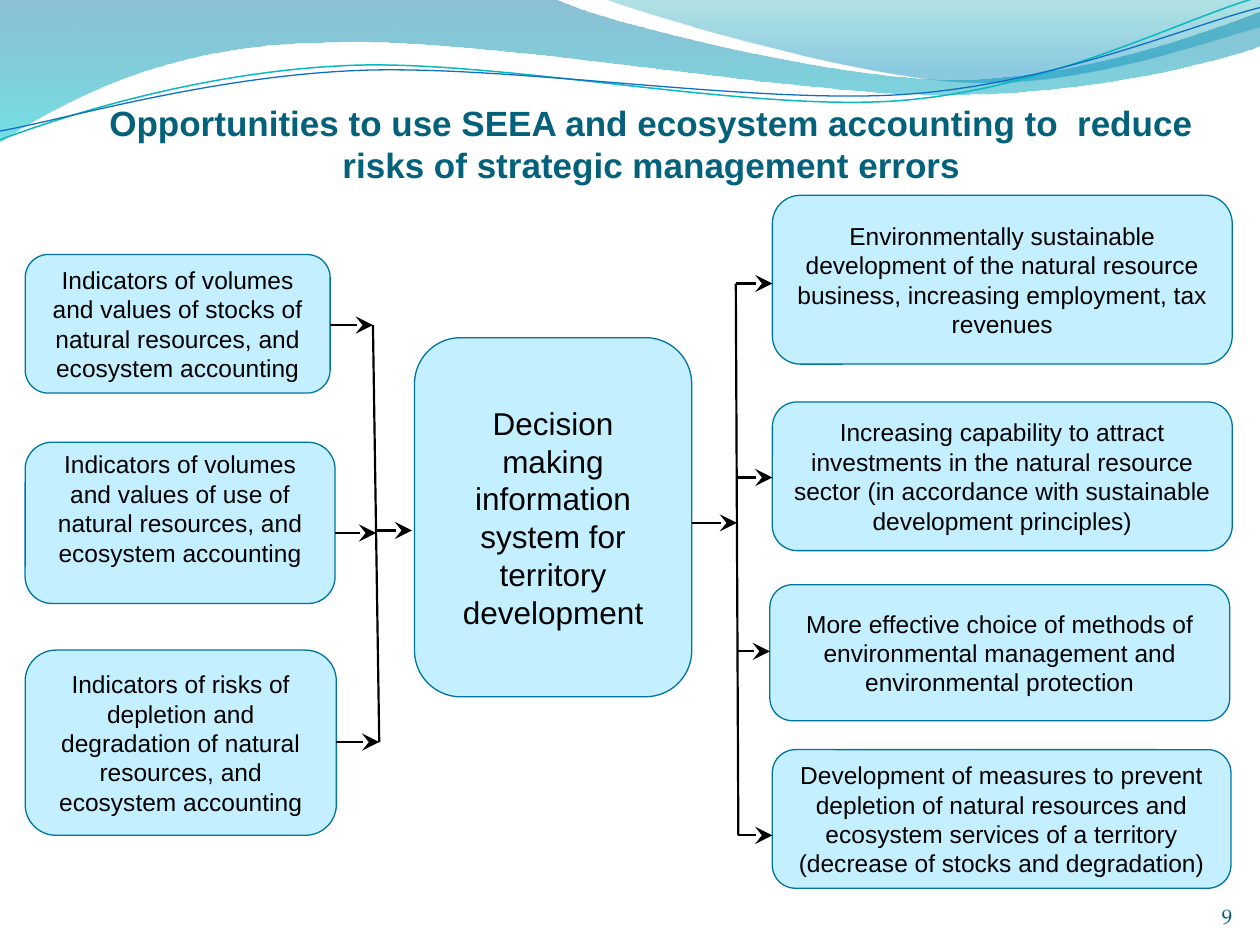
from lxml import etree
from pptx import Presentation
from pptx.dml.color import RGBColor
from pptx.enum.shapes import MSO_CONNECTOR, MSO_SHAPE
from pptx.enum.text import MSO_ANCHOR, PP_ALIGN
from pptx.oxml.ns import qn
from pptx.util import Inches, Pt

STRAIGHT = MSO_CONNECTOR.STRAIGHT
ROUNDED = MSO_SHAPE.ROUNDED_RECTANGLE
MIDDLE, BOTTOM = MSO_ANCHOR.MIDDLE, MSO_ANCHOR.BOTTOM
CENTER, RIGHT = PP_ALIGN.CENTER, PP_ALIGN.RIGHT
UNITS_PER_INCH = 1000

WAVES = [
    {"start": (0, -0.01), "gradient": [(0, "0074A1", 45), (1, "00C6CF", 55)], "steps": [
        [(4.4, -0.01)],
        [(4.76, 0.17), (6.64, 0.63), (7.58, 0.63)],
        [(8.53, 0.63), (9.58, 0.26), (10, 0.09)],
        [(10.01, 0.36)],
        [(9.83, 0.44), (8.7, 0.76), (7.46, 0.75)],
        [(6.22, 0.75), (3.82, 0.28), (2.57, 0.34)],
        [(1.29, 0.35), (0.46, 0.83), (-0.01, 1.13)]]},
    {"start": (4.79, -0.01), "gradient": [(0, "00A1A9", 30), (0.8, "008BBF", 45)], "steps": [
        [(5.09, 0.11), (6.82, 0.62), (7.69, 0.65)],
        [(8.56, 0.69), (9.61, 0.32), (10, 0.21)],
        [(10, 0)]]},
    {"start": (0, 1.11), "line": ("0AB8BF", 0.85), "steps": [
        [(0.48, 0.93), (1.58, 0.57), (2.77, 0.52)],
        [(3.95, 0.47), (5.93, 0.89), (7.13, 0.8)],
        [(8.33, 0.71), (9.38, 0.15), (9.98, -0.02)]]},
    {"start": (0, 1.04), "line": ("0F6FC6", 0.75), "steps": [
        [(0.47, 0.96), (1.64, 0.61), (2.83, 0.56)],
        [(4.03, 0.51), (5.97, 0.83), (7.17, 0.75)],
        [(8.36, 0.67), (9.41, 0.21), (10, 0.06)]]},
]

TITLE = "Opportunities to use SEEA and ecosystem accounting to  reduce risks of strategic management errors"
PAGE_NUMBER = "9"

INDICATORS = [
    ("Indicators of volumes and values of stocks of natural resources, and ecosystem accounting",
     (0.2, 2.02, 2.42, 1.1), 2.58, 0.05),
    ("Indicators of volumes and values of use of natural resources, and ecosystem accounting",
     (0.2, 3.51, 2.46, 1.28), 4.23, 0.28),
    ("Indicators of risks of depletion and degradation of natural resources, and ecosystem accounting",
     (0.2, 5.16, 2.47, 1.47), 5.89, 0.05),
]
DECISION = ("Decision making information system for territory development", (3.29, 2.68, 2.2, 2.85))
OUTCOMES = [
    ("Environmentally sustainable development of the natural resource business, "
     "increasing employment, tax revenues", (6.13, 1.55, 3.65, 1.34), 2.25),
    ("Increasing capability to attract investments in the natural resource sector "
     "(in accordance with sustainable development principles)", (6.13, 3.19, 3.65, 1.18), 3.79),
    ("More effective choice of methods of environmental management and environmental protection",
     (6.11, 4.64, 3.65, 1.08), 5.17),
    ("Development of measures to prevent depletion of natural resources and ecosystem services "
     "of a territory (decrease of stocks and degradation)", (6.13, 5.95, 3.64, 1.1), 6.63),
]
LEFT_TRUNK = ((2.96, 2.58), (3.01, 5.89))
RIGHT_TRUNK = ((5.84, 2.25), (5.86, 6.63))
INPUT_Y, OUTPUT_Y = 4.21, 4.15

BOX_FONT = {"name": "Arial", "size": Pt(14), "color": "000000"}
DECISION_FONT = {**BOX_FONT, "size": Pt(18)}
TITLE_FONT = {"name": "Arial", "size": Pt(20), "bold": True, "color": "04617B"}
NUMBER_FONT = {"name": "TeX Gyre Pagella", "size": Pt(12), "color": "045D75"}
ARROWHEAD = {"type": "stealth", "w": "lg", "len": "lg"}


def rgb(color):
    return RGBColor.from_string(color)


def set_line(line, color, width):
    line.color.rgb = rgb(color)
    line.width = Pt(width)


def set_text(shape, text, font, anchor, align, insets):
    frame = shape.text_frame
    frame.word_wrap = True
    frame.vertical_anchor = anchor
    for side, inset in zip(("left", "top", "right", "bottom"), insets):
        setattr(frame, f"margin_{side}", Inches(inset))
    paragraph = frame.paragraphs[0]
    paragraph.alignment = align
    run = paragraph.add_run()
    run.text = text
    for name, value in font.items():
        if name == "color":
            run.font.color.rgb = rgb(value)
        else:
            setattr(run.font, name, value)


def bend(shape, steps):
    segments = iter(list(shape._element.iter(qn("a:lnTo"))))
    for step in steps:
        group = [next(segments) for point in step]
        if len(group) == 3:
            curve = etree.Element(qn("a:cubicBezTo"))
            group[0].addprevious(curve)
            for segment in group:
                curve.append(segment[0])
                segment.getparent().remove(segment)


def set_gradient(fill, stops):
    fill.gradient()
    fill.gradient_angle = 270
    for stop, (position, color, opacity) in zip(fill.gradient_stops, stops):
        stop.position = position
        stop.color.rgb = rgb(color)
    elements = fill._xPr.iter(qn("a:srgbClr"))
    for element, (position, color, opacity) in zip(elements, stops):
        etree.SubElement(element, qn("a:alpha")).set("val", str(opacity * 1000))


def to_units(point):
    return tuple(round(value * UNITS_PER_INCH) for value in point)


def add_wave(shapes, wave):
    closed = "gradient" in wave
    points = [to_units(point) for step in wave["steps"] for point in step]
    builder = shapes.build_freeform(*to_units(wave["start"]), scale=Inches(1) / UNITS_PER_INCH)
    builder.add_line_segments(points, close=closed)
    shape = builder.convert_to_shape()
    shape.shadow.inherit = False
    bend(shape, wave["steps"])
    if closed:
        set_gradient(shape.fill, wave["gradient"])
        shape.line.fill.background()
    else:
        shape.fill.background()
        set_line(shape.line, *wave["line"])


def add_box(shapes, text, place, font=BOX_FONT, bottom=0.05):
    box = shapes.add_shape(ROUNDED, *map(Inches, place))
    box.shadow.inherit = False
    box.fill.solid()
    box.fill.fore_color.rgb = rgb("C4EFFF")
    set_line(box.line, "0074A1", 0.75)
    set_text(box, text, font, MIDDLE, CENTER, (0.1, 0.05, 0.1, bottom))


def add_label(shapes, text, place, font, align, insets):
    label = shapes.add_textbox(*map(Inches, place))
    set_text(label, text, font, BOTTOM, align, insets)


def add_line(shapes, start, end, arrow=True):
    connector = shapes.add_connector(STRAIGHT, *map(Inches, (*start, *end)))
    set_line(connector.line, "000000", 1.25)
    if arrow:
        etree.SubElement(connector.line._get_or_add_ln(), qn("a:tailEnd"), ARROWHEAD)
    etree.SubElement(connector._element.spPr, qn("a:effectLst"))


def trunk_x(trunk, y):
    (x1, y1), (x2, y2) = trunk
    return x1 + (x2 - x1) * (y - y1) / (y2 - y1)


def main():
    presentation = Presentation()
    presentation.slide_width, presentation.slide_height = Inches(10), Inches(7.5)
    slide = presentation.slides.add_slide(presentation.slide_layouts[6])
    shapes = slide.shapes

    for wave in WAVES:
        add_wave(shapes, wave)

    for text, place, arrow_y, bottom in INDICATORS:
        add_box(shapes, text, place, bottom=bottom)
        add_line(shapes, (place[0] + place[2], arrow_y), (trunk_x(LEFT_TRUNK, arrow_y), arrow_y))
    for text, place, arrow_y in OUTCOMES:
        add_box(shapes, text, place)
        add_line(shapes, (trunk_x(RIGHT_TRUNK, arrow_y), arrow_y), (place[0], arrow_y))

    text, place = DECISION
    add_box(shapes, text, place, DECISION_FONT)
    add_line(shapes, (trunk_x(LEFT_TRUNK, INPUT_Y), INPUT_Y), (place[0] - 0.02, INPUT_Y))
    add_line(shapes, (place[0] + place[2], OUTPUT_Y), (trunk_x(RIGHT_TRUNK, OUTPUT_Y), OUTPUT_Y))
    for trunk in (LEFT_TRUNK, RIGHT_TRUNK):
        add_line(shapes, *trunk, arrow=False)

    add_label(shapes, TITLE, (0.67, 0.6, 9, 0.87), TITLE_FONT, CENTER, (0, 0.05, 0, 0))
    add_label(shapes, PAGE_NUMBER, (8.94, 6.95, 0.84, 0.42), NUMBER_FONT, RIGHT, (0, 0, 0, 0))
    presentation.save("out.pptx")


if __name__ == "__main__":
    main()
